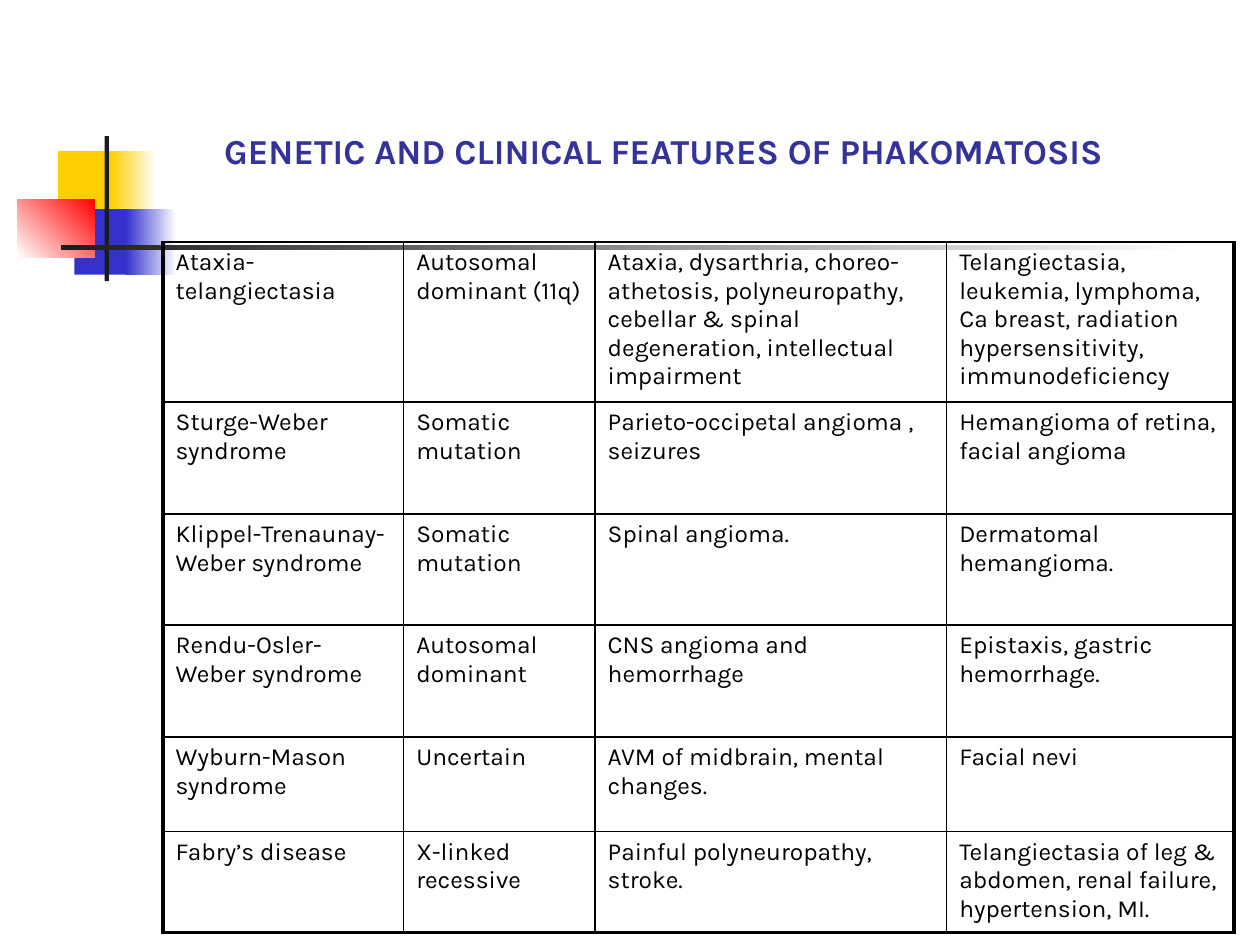
from lxml.etree import SubElement
from pptx import Presentation
from pptx.dml.color import RGBColor
from pptx.enum.shapes import MSO_SHAPE as Shape
from pptx.enum.text import MSO_ANCHOR as Anchor
from pptx.oxml.ns import qn
from pptx.util import Pt

FONT = "Karla"
BLACK = RGBColor(0x00, 0x00, 0x00)
WHITE = RGBColor(0xFF, 0xFF, 0xFF)
YELLOW = RGBColor(0xFF, 0xCF, 0x01)
BLUE = RGBColor(0x33, 0x33, 0xCC)
RED = RGBColor(0xFF, 0x00, 0x00)
CHARCOAL = RGBColor(0x1C, 0x1C, 0x1C)
NAVY = RGBColor(0x33, 0x33, 0x99)

THIN, THICK = 1, 2.25
COLUMN_WIDTHS = [137.5, 109.4, 200.9, 164.2]
ROW_HEIGHTS = [91.4, 64.1, 63.4, 64.1, 54, 57.4]
DISORDERS = [
    ("Ataxia-telangiectasia", "Autosomal dominant (11q)",
     "Ataxia, dysarthria, choreo-athetosis, polyneuropathy, cebellar & spinal "
     "degeneration, intellectual impairment",
     "Telangiectasia, leukemia, lymphoma, Ca breast, radiation hypersensitivity, "
     "immunodeficiency"),
    ("Sturge-Weber syndrome", "Somatic mutation",
     "Parieto-occipetal angioma , seizures", "Hemangioma of retina, facial angioma"),
    ("Klippel-Trenaunay-Weber syndrome", "Somatic mutation",
     "Spinal angioma.", "Dermatomal hemangioma."),
    ("Rendu-Osler-Weber syndrome", "Autosomal dominant",
     "CNS angioma and hemorrhage", "Epistaxis, gastric hemorrhage."),
    ("Wyburn-Mason syndrome", "Uncertain",
     "AVM of midbrain, mental changes.", "Facial nevi"),
    ("Fabry’s disease", "X-linked recessive",
     "Painful polyneuropathy, stroke.",
     "Telangiectasia of leg & abdomen, renal failure, hypertension, MI."),
]


def add_block(page, left, top, width, height, color, end_color=None, angle=0):
    block = page.shapes.add_shape(
        Shape.RECTANGLE, Pt(left), Pt(top), Pt(width), Pt(height))
    block.shadow.inherit = False
    block.line.fill.background()
    if end_color is None:
        block.fill.solid()
        block.fill.fore_color.rgb = color
        return
    block.fill.gradient()
    block.fill.gradient_angle = angle
    for stop, stop_color in zip(block.fill.gradient_stops, (color, end_color)):
        stop.color.rgb = stop_color


def add_ornament(page):
    add_block(page, 33.1, 86.4, 34.6, 37.4, YELLOW)
    add_block(page, 63.4, 86.4, 25.9, 37.4, YELLOW, WHITE)
    add_block(page, 42.5, 119.5, 33.1, 37.4, BLUE)
    add_block(page, 72, 119.5, 28.8, 37.4, BLUE, WHITE)
    add_block(page, 10.1, 113.8, 43.9, 33.1, WHITE, RED, 45)
    add_block(page, 59.8, 77.8, 2.5, 82.8, CHARCOAL)
    add_block(page, 34.6, 140.2, 648, 2.5, CHARCOAL, WHITE)


def add_span(para, text, size, color, bold=False):
    span = para.add_run()
    span.text = text
    span.font.name = FONT
    span.font.size = Pt(size)
    span.font.bold = bold
    span.font.color.rgb = color


def add_title(page, text):
    box = page.shapes.add_textbox(Pt(90.7), Pt(16.6), Pt(613.4), Pt(85))
    frame = box.text_frame
    frame.word_wrap = True
    frame.vertical_anchor = Anchor.BOTTOM
    frame.margin_left = Pt(37.4)
    add_span(frame.paragraphs[0], text, 20, NAVY, True)


def set_borders(cell, **widths):
    properties = cell._tc.get_or_add_tcPr()
    for position, (side, width) in enumerate(widths.items()):
        line = SubElement(properties, qn(f"a:ln{side}"), w=str(Pt(width)))
        fill = SubElement(line, qn("a:solidFill"))
        SubElement(fill, qn("a:srgbClr"), val=str(BLACK))
        properties.remove(line)
        properties.insert(position, line)


def add_disorder_table(page):
    last_row, last_column = len(ROW_HEIGHTS) - 1, len(COLUMN_WIDTHS) - 1
    table = page.shapes.add_table(
        len(ROW_HEIGHTS), len(COLUMN_WIDTHS), Pt(93.2), Pt(138.2),
        Pt(sum(COLUMN_WIDTHS)), Pt(sum(ROW_HEIGHTS))).table
    table.first_row = table.horz_banding = False
    for column, width in zip(table.columns, COLUMN_WIDTHS):
        column.width = Pt(width)
    for i, (row, height) in enumerate(zip(table.rows, ROW_HEIGHTS)):
        row.height = Pt(height)
        for j, cell in enumerate(row.cells):
            cell.fill.background()
            para = cell.text_frame.paragraphs[0]
            para.space_before = Pt(2.8)
            add_span(para, DISORDERS[i][j], 14, BLACK)
            set_borders(cell,
                        L=THICK if j == 0 else THIN,
                        R=THICK if j == last_column else THIN,
                        T=THIN,
                        B=THICK if i == last_row else THIN)


def main():
    """Build the slide on the features of phakomatosis."""
    deck = Presentation()
    deck.slide_width, deck.slide_height = Pt(720), Pt(540)
    page = deck.slides.add_slide(deck.slide_layouts[6])
    add_ornament(page)
    add_title(page, "GENETIC AND CLINICAL FEATURES OF PHAKOMATOSIS")
    add_disorder_table(page)
    deck.save("out.pptx")


if __name__ == "__main__":
    main()
